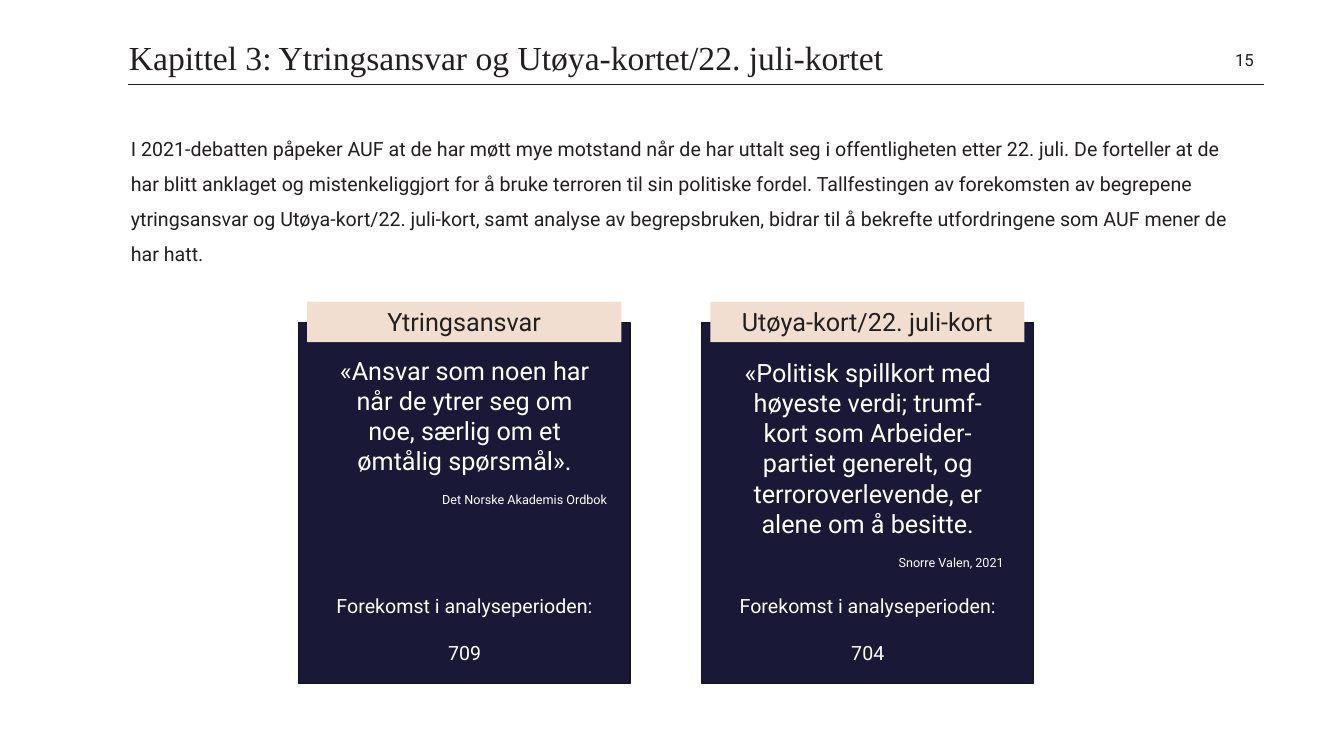
from pptx import Presentation
from pptx.dml.color import RGBColor
from pptx.enum.shapes import MSO_CONNECTOR, MSO_SHAPE
from pptx.enum.text import MSO_ANCHOR, MSO_AUTO_SIZE, PP_ALIGN
from pptx.oxml.ns import qn
from pptx.util import Cm, Pt

INK, NAVY, NAVY_EDGE, PEACH, WHITE = "231F20", "191836", "121228", "F1DED0", "FFFFFF"

INTRO = (
    "I 2021-debatten påpeker AUF at de har møtt mye motstand når de har uttalt seg i "
    "offentligheten etter 22. juli. De forteller at de har blitt anklaget og mistenkeliggjort "
    "for å bruke terroren til sin politiske fordel. Tallfestingen av forekomsten av begrepene "
    "ytringsansvar og Utøya-kort/22. juli-kort, samt analyse av begrepsbruken, bidrar til å "
    "bekrefte utfordringene som AUF mener de har hatt."
)

# Offsets and heights in cm, measured from the card's corner
TERMS = [
    dict(
        left=7.52, term="Ytringsansvar",
        quote="«Ansvar som noen har når de ytrer seg om noe, særlig om et ømtålig spørsmål».",
        quote_top=0.69, quote_height=4.11,
        origin="Det Norske Akademis Ordbok", origin_at=(2.13, 4.14), count="709",
    ),
    dict(
        left=17.68, term="Utøya-kort/22. juli-kort",
        quote="«Politisk spillkort med høyeste verdi; trumf-kort som Arbeider-partiet generelt, "
              "og terroroverlevende, er alene om å besitte.",
        quote_top=0.74, quote_height=5.64,
        origin="Snorre Valen, 2021", origin_at=(2.72, 5.74), count="704",
    ),
]


def color(hex_code):
    return RGBColor.from_string(hex_code)


def style(paragraph, size, hex_code, align=PP_ALIGN.LEFT, font="Roboto"):
    paragraph.alignment = align
    paragraph.font.name = font
    paragraph.font.size = Pt(size)
    paragraph.font.color.rgb = color(hex_code)


def add_text(slide, box, lines, size, hex_code, align=PP_ALIGN.CENTER):
    frame = slide.shapes.add_textbox(*map(Cm, box)).text_frame
    frame.word_wrap = True
    frame.text = "\n".join(lines)
    for paragraph in frame.paragraphs:
        style(paragraph, size, hex_code, align)
    return frame


def add_block(slide, box, fill, edge=None):
    block = slide.shapes.add_shape(MSO_SHAPE.RECTANGLE, *map(Cm, box))
    block.shadow.inherit = False
    block.fill.solid()
    block.fill.fore_color.rgb = color(fill)
    if edge:
        block.line.color.rgb = color(edge)
        block.line.width = Pt(1)
    else:
        block.line.fill.background()
    return block


def add_header(slide, left, top, width, height, heading, number):
    # Rule under the heading
    rule_y = Cm(top + height + 0.09)
    rule = slide.shapes.add_connector(
        MSO_CONNECTOR.STRAIGHT, Cm(left), rule_y, Cm(left + width), rule_y)
    rule.line.color.rgb = color(INK)
    rule.line.width = Pt(0.75)
    properties = rule._element.spPr
    properties.append(properties.makeelement(qn("a:effectLst"), {}))

    # Heading
    title = slide.shapes.title
    title.left, title.top, title.width, title.height = map(Cm, (left + 0.02, top, 21.46, height))
    frame = title.text_frame
    frame.text = heading
    frame.auto_size = MSO_AUTO_SIZE.NONE
    frame.vertical_anchor = MSO_ANCHOR.MIDDLE
    frame.margin_left = frame.margin_top = frame.margin_right = frame.margin_bottom = 0
    frame.paragraphs[0].line_spacing = 0.9
    style(frame.paragraphs[0], 24, INK, font="Times New Roman")

    # Page number
    page = add_text(slide, (left + width - 2.82, top, 2.82, height), [number], 12, INK,
                    PP_ALIGN.RIGHT)
    page.vertical_anchor = MSO_ANCHOR.MIDDLE


def add_intro(slide, left, top, width, height):
    frame = add_text(slide, (left, top, width, height), [INTRO], 14, INK, PP_ALIGN.LEFT)
    frame.paragraphs[0].line_spacing = 1.5


def add_term_card(slide, left, top, width, height, card):
    add_block(slide, (left, top, width, height), NAVY, NAVY_EDGE)

    # Term label across the card's top edge
    label = add_block(slide, (left + 0.22, top - 0.53, width - 0.44, 1.02), PEACH).text_frame
    label.text = card["term"]
    style(label.paragraphs[0], 18, INK, PP_ALIGN.CENTER)

    # Definition and where it comes from
    inner_left, inner_width = left + 0.62, width - 1.22
    add_text(slide, (inner_left, top + card["quote_top"], inner_width, card["quote_height"]),
             [card["quote"]], 18, WHITE)
    origin_x, origin_y = card["origin_at"]
    add_text(slide, (left + origin_x, top + origin_y, inner_width, 0.64),
             [card["origin"]], 9, WHITE)

    # Number of occurrences
    occurrences = add_text(slide, (inner_left, top + 6.71, inner_width, 2.06),
                           ["Forekomst i analyseperioden:", card["count"]], 14, WHITE)
    occurrences.paragraphs[1].space_before = Pt(16.5)


def main():
    deck = Presentation()
    deck.slide_width, deck.slide_height = Cm(33.87), Cm(19.05)
    slide = deck.slides.add_slide(deck.slide_layouts[5])

    add_header(slide, 3.23, 0.97, 28.62, 1.07,
               "Kapittel 3: Ytringsansvar og Utøya-kortet/22. juli-kortet", "15")
    add_intro(slide, 3.05, 3.02, 28.8, 3.6)
    for card in TERMS:
        add_term_card(slide, card["left"], 8.13, 8.36, 9.09, card)

    deck.save("out.pptx")


if __name__ == "__main__":
    main()
